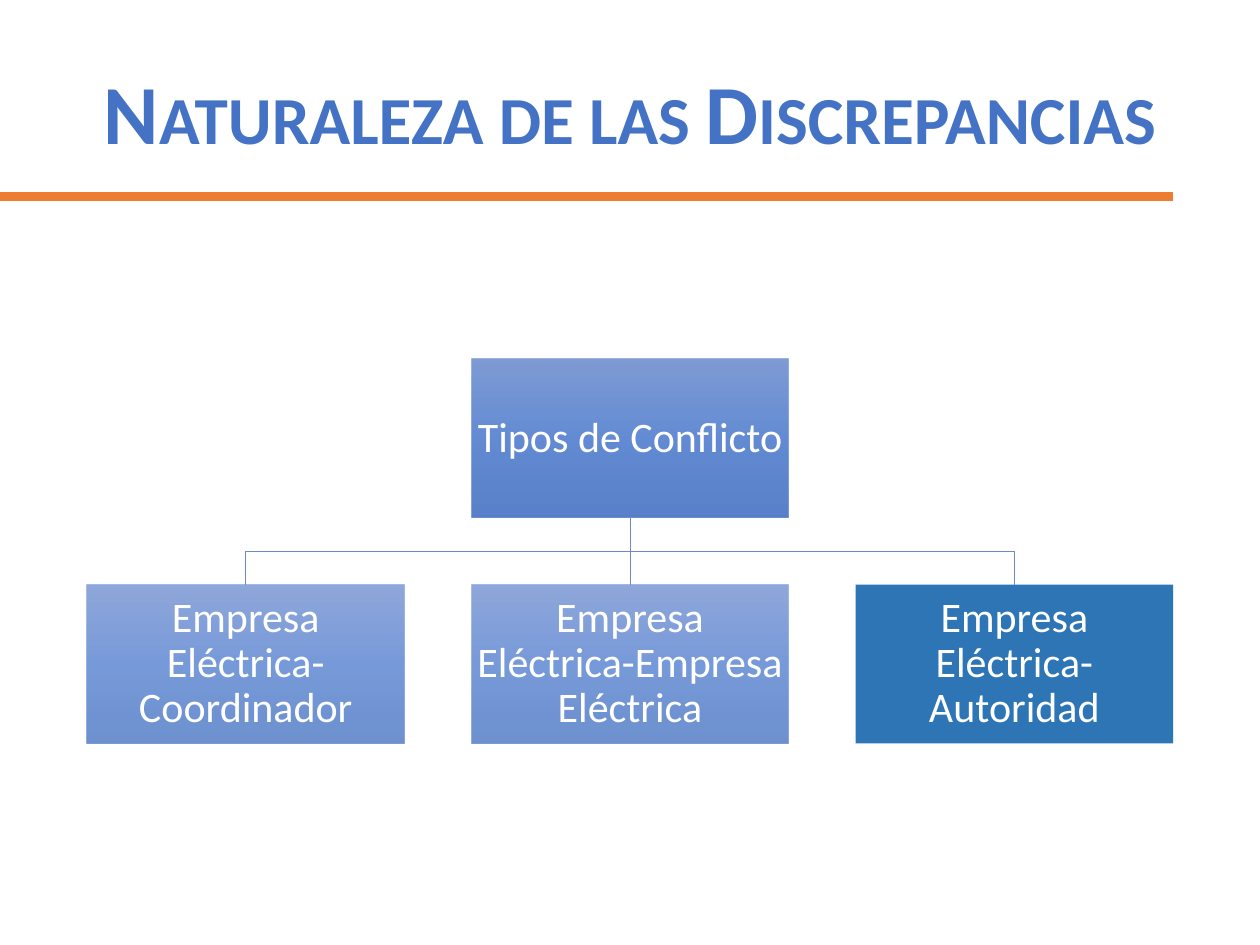
"""Build the slide on the types of conflict behind discrepancies."""
from lxml.etree import SubElement
from pptx import Presentation
from pptx.dml.color import RGBColor
from pptx.enum.shapes import MSO_CONNECTOR as Connector, MSO_SHAPE as Shape
from pptx.enum.text import MSO_ANCHOR as Anchor, PP_ALIGN as Align
from pptx.oxml.ns import qn
from pptx.util import Inches, Pt

BLUE = RGBColor(0x44, 0x72, 0xC4)
ORANGE = RGBColor(0xED, 0x7D, 0x31)
BRANCH_BLUE = RGBColor(0x6D, 0x89, 0xCB)
DARK_BLUE = RGBColor(0x2E, 0x75, 0xB6)
WHITE = RGBColor(0xFF, 0xFF, 0xFF)
GRADIENT = [RGBColor(0x61, 0x83, 0xCB), RGBColor(0x3E, 0x70, 0xCA), RGBColor(0x30, 0x62, 0xBB)]

BOX_WIDTH, BOX_HEIGHT = 2.52, 1.26
LEFT, STEP = 0.69, 3.05
ROOT_TOP, CHILD_TOP = 2.85, 4.64


def write_text(shape, text, size, color, margin):
    frame = shape.text_frame
    frame.word_wrap = True
    frame.vertical_anchor = Anchor.MIDDLE
    frame.margin_left = frame.margin_right = Inches(margin)
    frame.margin_top = frame.margin_bottom = Inches(margin)
    para = frame.paragraphs[0]
    para.alignment = Align.CENTER
    para.line_spacing = 0.9
    span = para.add_run()
    span.text = text
    para.font.name = "Calibri"
    para.font.size = Pt(size)
    para.font.color.rgb = color
    return para


def add_box(column, top, text, opacity):
    box = page.shapes.add_shape(Shape.RECTANGLE, Inches(LEFT + column * STEP), Inches(top),
                                Inches(BOX_WIDTH), Inches(BOX_HEIGHT))
    box.shadow.inherit = False
    box.line.fill.background()
    if opacity == 100:
        box.fill.solid()
        box.fill.fore_color.rgb = DARK_BLUE
    else:
        box.fill.gradient()
        box.fill.gradient_angle = 270
        stops = box._element.spPr.find(qn("a:gradFill")).find(qn("a:gsLst"))
        for stop in list(stops):
            stops.remove(stop)
        for index, color in enumerate(GRADIENT):
            stop = SubElement(stops, qn("a:gs"), pos=str(index * 50000))
            tint = SubElement(stop, qn("a:srgbClr"), val=str(color))
            SubElement(tint, qn("a:alpha"), val=str(opacity * 1000))
    write_text(box, text, 24, WHITE, 0.02)
    return box


deck = Presentation()
deck.slide_width, deck.slide_height = Inches(10), Inches(7.5)
page = deck.slides.add_slide(deck.slide_layouts[6])

title = page.shapes.add_textbox(Inches(LEFT), Inches(0.4), Inches(8.62), Inches(1.07))
heading = write_text(title, "Naturaleza de las Discrepancias", 48, BLUE, 0.05)
heading.font.bold = True
heading.runs[0].font._element.set("cap", "small")

rule = page.shapes.add_connector(Connector.STRAIGHT, Inches(9.31), Inches(1.56), 0, Inches(1.56))
rule.line.color.rgb = ORANGE
rule.line.width = Pt(5)
SubElement(rule._element.spPr, qn("a:effectLst"))

root = add_box(1, ROOT_TOP, "Tipos de Conflicto", 80)
children = [
    add_box(column, CHILD_TOP, text, opacity)
    for column, (text, opacity) in enumerate([
        ("Empresa Eléctrica-Coordinador", 70),
        ("Empresa Eléctrica-Empresa Eléctrica", 70),
        ("Empresa Eléctrica-Autoridad", 100),
    ])
]

trunk_x = root.left + root.width // 2
root_bottom = root.top + root.height
for child in children:
    child_x = child.left + child.width // 2
    if child_x == trunk_x:
        branch = page.shapes.add_connector(Connector.STRAIGHT, trunk_x, root_bottom, child_x, child.top)
        branch.begin_connect(root, 2)
        branch.end_connect(child, 0)
        SubElement(branch._element.spPr, qn("a:effectLst"))
    else:
        middle = (root_bottom + child.top) // 2
        outline = page.shapes.build_freeform(trunk_x, root_bottom)
        outline.add_line_segments([(trunk_x, middle), (child_x, middle), (child_x, child.top)], close=False)
        branch = outline.convert_to_shape()
        branch.shadow.inherit = False
        branch.fill.background()
    branch.line.color.rgb = BRANCH_BLUE
    branch.line.width = Pt(0.5)

deck.save("out.pptx")
